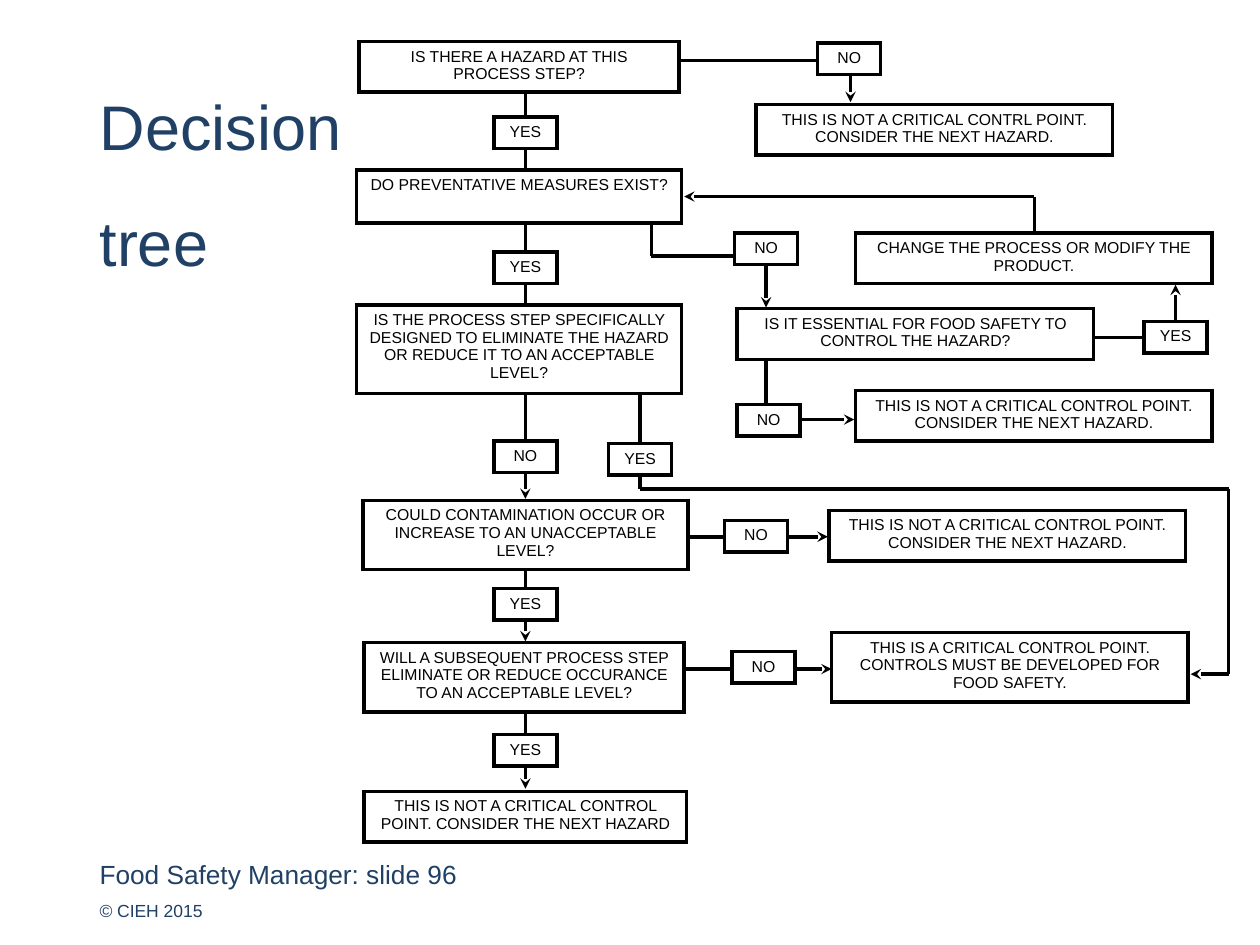
from itertools import pairwise

from lxml import etree
from pptx import Presentation
from pptx.dml.color import RGBColor
from pptx.enum.shapes import MSO_CONNECTOR
from pptx.enum.text import PP_ALIGN
from pptx.oxml.ns import qn
from pptx.util import Inches, Pt

CENTER = PP_ALIGN.CENTER
STRAIGHT = MSO_CONNECTOR.STRAIGHT
COLORS = {"navy": "204066", "black": "000000", "white": "FFFFFF"}
FONT = "Arial"
SPINE = 4.17  # x of the main line of questions
ANSWER_SIZE = (0.5, 0.25)
BORDER_PT, LINK_PT = 2.25, 2
NEXT_HAZARD = "THIS IS NOT A CRITICAL CONTROL POINT. CONSIDER THE NEXT HAZARD."


class FlowSlide:
    """Holds the style and the slide being drawn."""

    def __init__(self, slide):
        self.slide = slide

    def format_text(self, paragraph, size, color, **layout):
        for name, value in layout.items():
            setattr(paragraph, name, value)
        for name, value in {"name": FONT, "size": Pt(size)}.items():
            setattr(paragraph.font, name, value)
        paragraph.font.color.rgb = RGBColor.from_string(COLORS[color])

    def text(self, lines, left, top, width, height, size, wrap=True, line_spacing=1, gap=0):
        frame = self.slide.shapes.add_textbox(*map(Inches, (left, top, width, height))).text_frame
        margins = dict.fromkeys(("margin_left", "margin_top", "margin_right", "margin_bottom"), 0)
        for name, value in {"word_wrap": wrap, **margins}.items():
            setattr(frame, name, value)
        for index, line in enumerate(lines):
            paragraph = frame.add_paragraph() if index else frame.paragraphs[0]
            paragraph.text = line
            self.format_text(paragraph, size, "navy", line_spacing=line_spacing,
                             space_before=Pt(gap if index else 0))

    def box(self, label, left, top, width, height):
        table = self.slide.shapes.add_table(1, 1, *map(Inches, (left, top, width, height))).table
        for name in ("first_row", "horz_banding"):
            setattr(table, name, False)
        cell = table.cell(0, 0)
        cell.text = label
        self.format_text(cell.text_frame.paragraphs[0], 9, "black", alignment=CENTER)
        self.border(cell)
        cell.fill.solid()
        cell.fill.fore_color.rgb = RGBColor.from_string(COLORS["white"])

    def border(self, cell):
        properties = cell._tc.get_or_add_tcPr()
        for side in ("a:lnL", "a:lnR", "a:lnT", "a:lnB"):
            edge = etree.SubElement(properties, qn(side), w=str(Pt(BORDER_PT)))
            fill = etree.SubElement(edge, qn("a:solidFill"))
            etree.SubElement(fill, qn("a:srgbClr"), val=COLORS["black"])

    def answer(self, label, left, top):
        self.box(label, left, top, *ANSWER_SIZE)

    def link(self, *points, arrow=False):
        """Join the points with straight segments; the arrow ends the last one."""
        for start, end in pairwise(points):
            segment = self.slide.shapes.add_connector(STRAIGHT, *map(Inches, start + end))
            segment.line.width = Pt(LINK_PT)
            segment.line.color.rgb = RGBColor.from_string(COLORS["black"])
            if arrow and end == points[-1]:
                etree.SubElement(segment.line._get_or_add_ln(), qn("a:tailEnd"), type="stealth")
            etree.SubElement(segment._element.spPr, qn("a:effectLst"))


def main():
    prs = Presentation()
    prs.slide_width, prs.slide_height = Inches(10), Inches(7.5)
    flow = FlowSlide(prs.slides.add_slide(prs.slide_layouts[6]))

    # Footer and title
    flow.text(["Food Safety Manager: slide 96"], 0.79, 6.81, 3.27, 0.25, 15)
    flow.text(["© CIEH 2015"], 0.79, 7.14, 1.06, 0.24, 10)
    flow.text(["Decision", "tree"], 0.79, 0.79, 2.05, 0.96, 36,
              wrap=False, line_spacing=0.85, gap=29.4)

    # Questions down the spine
    questions = [
        ("IS THERE A HAZARD AT THIS PROCESS STEP?", 2.85, 0.33, 2.54, 0.4),
        ("DO PREVENTATIVE MEASURES EXIST?", 2.83, 1.35, 2.58, 0.42),
        ("IS THE PROCESS STEP SPECIFICALLY DESIGNED TO ELIMINATE THE HAZARD "
         "OR REDUCE IT TO AN ACCEPTABLE LEVEL?", 2.83, 2.42, 2.58, 0.67),
        ("COULD CONTAMINATION OCCUR OR INCREASE TO AN UNACCEPTABLE LEVEL?",
         2.88, 3.97, 2.58, 0.53),
        ("WILL A SUBSEQUENT PROCESS STEP ELIMINATE OR REDUCE OCCURANCE "
         "TO AN ACCEPTABLE LEVEL?", 2.89, 5.1, 2.54, 0.53),
        ("THIS IS NOT A CRITICAL CONTROL POINT. CONSIDER THE NEXT HAZARD",
         2.89, 6.28, 2.56, 0.39),
    ]
    for question in questions:
        flow.box(*question)

    # Outcomes on the right, all of one width
    outcomes = [
        ("THIS IS NOT A CRITICAL CONTRL POINT. CONSIDER THE NEXT HAZARD.", 6, 0.83, 0.39),
        ("CHANGE THE PROCESS OR MODIFY THE PRODUCT.", 6.79, 1.85, 0.39),
        ("IS IT ESSENTIAL FOR FOOD SAFETY TO CONTROL THE HAZARD?", 5.85, 2.45, 0.39),
        (NEXT_HAZARD, 6.79, 3.1, 0.39),
        (NEXT_HAZARD, 6.58, 4.05, 0.39),
        ("THIS IS A CRITICAL CONTROL POINT. CONTROLS MUST BE DEVELOPED FOR FOOD SAFETY.",
         6.6, 5.02, 0.53),
    ]
    for label, left, top, height in outcomes:
        flow.box(label, left, top, 2.83, height)

    # Answers on the spine, each with a link in and a link out
    spine_answers = [
        # label, link start, answer top, link end, arrow
        ("YES", 0.73, 0.93, 1.36, False),
        ("YES", 1.76, 2, 2.42, False),
        ("NO", 3.11, 3.5, 3.96, True),
        ("YES", 4.52, 4.67, 5.09, True),
        ("YES", 5.65, 5.83, 6.26, True),
    ]
    width, height = ANSWER_SIZE
    for label, start, top, end, arrow in spine_answers:
        flow.answer(label, SPINE - width / 2, top)
        flow.link((SPINE, start), (SPINE, top))
        flow.link((SPINE, top + height), (SPINE, end), arrow=arrow)

    # Answers on the side branches
    side_answers = [
        ("NO", 6.49, 0.34), ("NO", 5.83, 1.85), ("YES", 9.08, 2.55), ("NO", 5.85, 3.21),
        ("YES", 4.83, 3.52), ("NO", 5.75, 4.13), ("NO", 5.81, 5.17),
    ]
    for side_answer in side_answers:
        flow.answer(*side_answer)

    # Links into the side answers
    flow.link((5.4, 0.48), (6.48, 0.48))
    flow.link((5.17, 1.77), (5.17, 2.03), (5.82, 2.03))
    flow.link((8.69, 2.68), (9.08, 2.68))
    flow.link((6.08, 2.85), (6.08, 3.21))
    flow.link((5.08, 3.12), (5.08, 3.52))
    flow.link((5.46, 4.26), (5.75, 4.26))
    flow.link((5.43, 5.31), (5.8, 5.31))

    # Arrows on to the next step
    arrows = [
        [(6.75, 0.59), (6.75, 0.81)],
        [(6.08, 2.1), (6.08, 2.44)],
        [(9.33, 2.55), (9.33, 2.26)],
        [(8.21, 1.84), (8.21, 1.56), (5.43, 1.56)],
        [(6.35, 3.33), (6.78, 3.33)],
        [(5.08, 3.77), (5.08, 3.88), (9.75, 3.88), (9.75, 5.35), (9.45, 5.35)],
        [(6.25, 4.26), (6.57, 4.26)],
        [(6.3, 5.31), (6.6, 5.31)],
    ]
    for points in arrows:
        flow.link(*points, arrow=True)

    prs.save("out.pptx")


if __name__ == "__main__":
    main()
